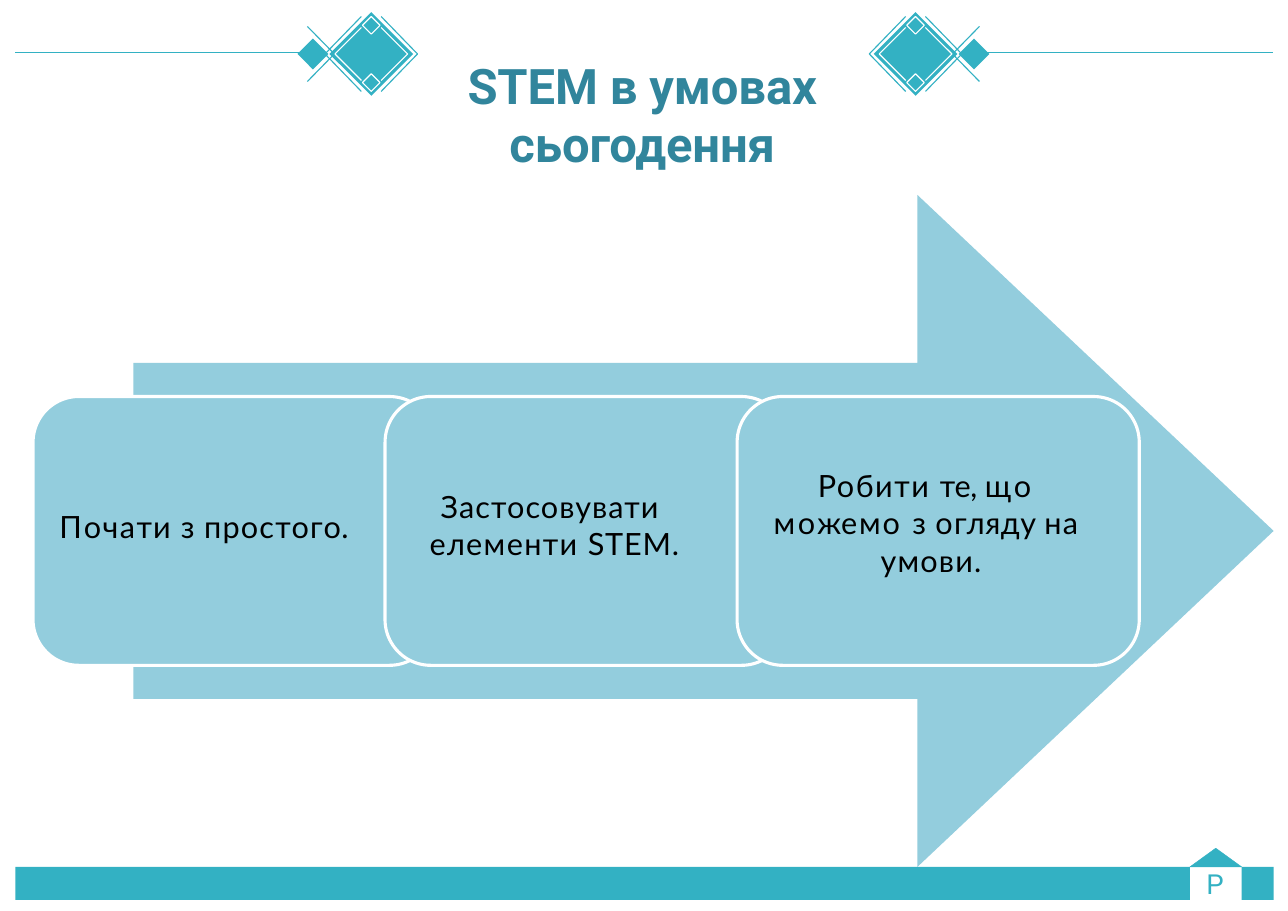
from pptx import Presentation
from pptx.dml.color import RGBColor
from pptx.enum.shapes import MSO_CONNECTOR, MSO_SHAPE
from pptx.enum.text import MSO_ANCHOR, PP_ALIGN
from pptx.oxml.ns import qn
from pptx.util import Inches, Pt
from lxml import etree

COLORS = {
    "teal": "33B1C3",
    "title": "31859C",
    "arrow": "93CDDD",
    "text": "000000",
    "white": "FFFFFF",
}
BREAK = ("\n", 0)
RULE_Y = 0.48
ORNAMENT_Y = 0.49
CARD_LEFT, CARD_STEP = 0.3, 3.195

# Each run is (text, letter spacing in points)
CARD_TEXTS = [
    dict(box=(0.53, 4.6, 3.04, 0.35), space_before=1,
         runs=[("П", 1.3), ("о", 0.8), ("ча", 1), ("ти ", 0.7), ("з ", 0.5),
               ("прос", 0.8), ("т", 0.5), ("о", 0.8), ("г", 0.5), ("о.", 0.2)]),
    dict(box=(3.89, 4.41, 2.57, 0.69), space_before=0.4, line_spacing=1.02,
         first_indent=0.1,
         runs=[("Застосовувати ", 0.7), BREAK, ("еле", 0.8), ("м", 1.1),
               ("ент", 0.8), ("и ", 0.9), ("STEM", 0.5), (".", -0.8)]),
    dict(box=(6.87, 4.22, 3.15, 1.04), space_before=0.5, line_spacing=1.02,
         align=PP_ALIGN.CENTER,
         runs=[("Робити ", 1), ("те, ", -0.2), ("що ", 1.7), BREAK, ("м", 1.7),
               ("о", 1.1), ("ж", -0.2), ("е", 1.1), ("мо ", 1.4), ("з ", 0.5),
               ("о", 0.8), ("г", 0.1), ("ляд", 0.3), ("у ", 0.1), ("на ", 0.8),
               BREAK, ("умови.", 0.8)]),
]


def rgb(name):
    return RGBColor.from_string(COLORS[name])


def style(shape, fill=None, line=None, width=0.75):
    shape.shadow.inherit = False
    if fill:
        shape.fill.solid()
        shape.fill.fore_color.rgb = rgb(fill)
    else:
        shape.fill.background()
    if line:
        shape.line.color.rgb = rgb(line)
        shape.line.width = Pt(width)
    else:
        shape.line.fill.background()


def add_preset(slide, kind, box, fill=None, line=None, width=0.75):
    shape = slide.shapes.add_shape(kind, *map(Inches, box))
    style(shape, fill, line, width)
    return shape


def add_diamond(slide, x, y, radius, fill=None, line=None):
    box = (x - radius, y - radius, 2 * radius, 2 * radius)
    add_preset(slide, MSO_SHAPE.DIAMOND, box, fill, line)


def add_line(slide, start, end):
    connector = slide.shapes.add_connector(
        MSO_CONNECTOR.STRAIGHT, *map(Inches, (*start, *end)))
    connector.line.color.rgb = rgb("teal")
    connector.line.width = Pt(0.75)
    etree.SubElement(connector._element.spPr, qn("a:effectLst"))


def add_chevron(slide, base_x, tip_x, half_height, color):
    points = [(base_x, ORNAMENT_Y - half_height), (tip_x, ORNAMENT_Y),
              (base_x, ORNAMENT_Y + half_height)]
    start, *rest = [(Inches(x), Inches(y)) for x, y in points]
    builder = slide.shapes.build_freeform(*start)
    builder.add_line_segments(rest, close=False)
    style(builder.convert_to_shape(), line=color)


def write(shape, runs, size, font, color, bold=False, align=PP_ALIGN.LEFT,
          space_before=0, line_spacing=None, margin=0.01, first_indent=0,
          inset_top=0.01):
    frame = shape.text_frame
    frame.word_wrap = True
    frame.vertical_anchor = MSO_ANCHOR.TOP
    frame.margin_left = frame.margin_right = frame.margin_bottom = 0
    frame.margin_top = Inches(inset_top)
    paragraph = frame.paragraphs[0]
    paragraph.alignment = align
    paragraph.space_before = Pt(space_before)
    if line_spacing:
        paragraph.line_spacing = line_spacing
    properties = paragraph._p.get_or_add_pPr()
    properties.set("marL", str(Inches(margin)))
    properties.set("indent", str(Inches(first_indent)))
    for text, spacing in runs:
        if text == "\n":
            paragraph.add_line_break()
            continue
        run = paragraph.add_run()
        run.text = text
        run.font.size = Pt(size)
        run.font.name = font
        run.font.bold = bold
        run.font.color.rgb = rgb(color)
        run._r.get_or_add_rPr().set("spc", str(round(spacing * 100)))


def add_ornament(slide, x, side, rule_end):
    """Diamond ornament; side is -1 or 1, the way its rule runs."""
    add_diamond(slide, x, ORNAMENT_Y, 0.38, fill="teal")
    near, far = x + side * 0.09, x + side * 0.58
    add_line(slide, (near, 0.24), (far, 0.74))
    add_line(slide, (far, 0.24), (near, 0.74))
    add_diamond(slide, x + side * 0.53, ORNAMENT_Y, 0.14, fill="teal")
    for direction in (-1, 1):
        base = x + direction * 0.09
        add_chevron(slide, base, x + direction * 0.42, 0.34, "teal")
        add_chevron(slide, base, x + direction * 0.33, 0.24, "white")
        add_diamond(slide, x, ORNAMENT_Y + direction * 0.26, 0.08, line="white")
    add_line(slide, (x + side * 0.64, RULE_Y), (rule_end, RULE_Y))


def add_footer(slide):
    for left, right in ((0.14, 10.8), (11.27, 11.56)):
        add_preset(slide, MSO_SHAPE.RECTANGLE,
                   (left, 7.87, right - left, 0.3), "teal")
    add_preset(slide, MSO_SHAPE.ISOSCELES_TRIANGLE,
               (10.8, 7.7, 0.47, 0.17), "teal", "teal", 0.25)
    letter = slide.shapes.add_textbox(*map(Inches, (10.94, 7.88, 0.2, 0.31)))
    write(letter, [("P", 0)], 18, "Roboto", "teal",
          line_spacing=Pt(20.9), inset_top=0)


def add_title(slide):
    title = slide.shapes.title
    title.left, title.top, title.width, title.height = map(
        Inches, (3.46, 0.49, 4.62, 1.63))
    write(title, [("STEM в умовах сьогодення", -0.1)], 32, "Roboto", "title",
          bold=True, align=PP_ALIGN.CENTER, space_before=1, margin=0.12)


def add_process(slide):
    arrow = add_preset(slide, MSO_SHAPE.RIGHT_ARROW,
                       (1.21, 1.77, 10.35, 6.1), "arrow")
    arrow.adjustments[0] = 0.5
    arrow.adjustments[1] = 0.53
    for index, options in enumerate(CARD_TEXTS):
        box = (CARD_LEFT + index * CARD_STEP, 3.6, 3.65, 2.44)
        card = add_preset(slide, MSO_SHAPE.ROUNDED_RECTANGLE, box,
                          "arrow", "white", 2.04)
        card.adjustments[0] = 0.17
        options = dict(options)
        label = slide.shapes.add_textbox(*map(Inches, options.pop("box")))
        write(label, size=20, font="Lato", color="text", **options)


def main():
    presentation = Presentation()
    presentation.slide_width = Inches(11.69)
    presentation.slide_height = Inches(8.27)
    slide = presentation.slides.add_slide(presentation.slide_layouts[5])

    # Heading between two mirrored ornaments
    add_title(slide)
    add_ornament(slide, 3.37, -1, 0.14)
    add_ornament(slide, 8.31, 1, 11.55)

    # Arrow with three steps, then the bar at the foot
    add_process(slide)
    add_footer(slide)

    presentation.save("out.pptx")


if __name__ == "__main__":
    main()
